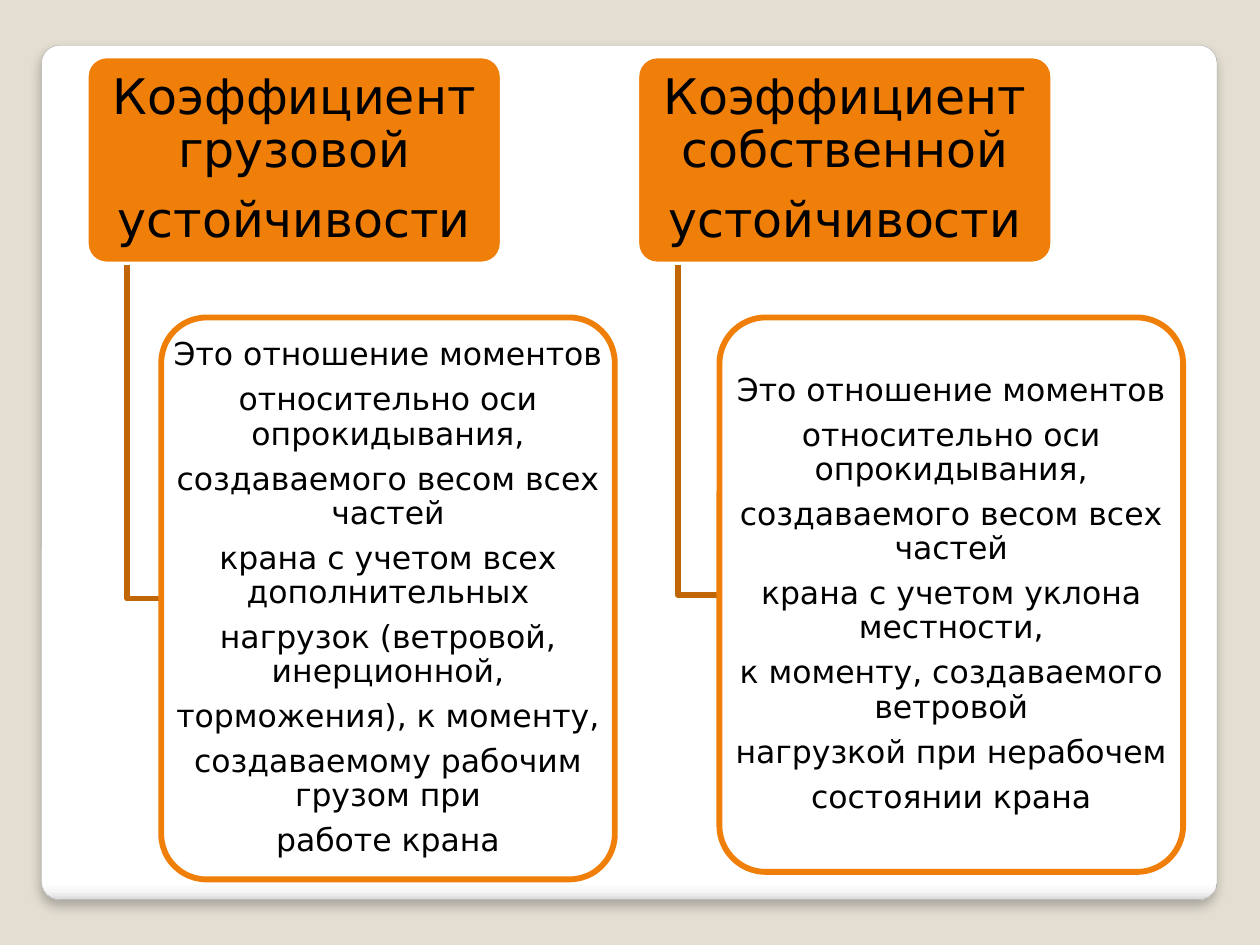
from lxml import etree
from pptx import Presentation
from pptx.dml.color import RGBColor
from pptx.enum.shapes import MSO_SHAPE
from pptx.enum.text import MSO_ANCHOR, PP_ALIGN
from pptx.oxml.ns import qn
from pptx.util import Inches, Pt

ROUND = MSO_SHAPE.ROUNDED_RECTANGLE
MIDDLE = MSO_ANCHOR.MIDDLE
CENTER = PP_ALIGN.CENTER
FONT = "DejaVu Sans"
COLORS = {
    "back": "E3DED1", "white": "FFFFFF", "edge": "A4A4A4", "black": "000000",
    "orange": "F07F09", "brown": "C06607",
}
PANEL_STOPS = [(0, "FFFFFF"), (98, "FFFFFF"), (99, "F7F7F7"), (100, "DADADA")]
TOP, HEAD_W, HEAD_H = 0.44, 3.31, 1.66
BODY_TOP, TRUNK = 2.52, 0.33

# head left, body left, body width, body height, head text, body text
BRANCHES = [
    (0.68, 1.28, 3.6, 4.46,
     ["Коэффициент грузовой", "устойчивости"],
     ["Это отношение моментов",
      "относительно оси опрокидывания,",
      "создаваемого весом всех частей",
      "крана с учетом всех дополнительных",
      "нагрузок (ветровой, инерционной,",
      "торможения), к моменту,",
      "создаваемому рабочим грузом при",
      "работе крана"]),
    (5.05, 5.71, 3.68, 4.4,
     ["Коэффициент собственной", "устойчивости"],
     ["Это отношение моментов",
      "относительно оси опрокидывания,",
      "создаваемого весом всех частей",
      "крана с учетом уклона местности,",
      "к моменту, создаваемого ветровой",
      "нагрузкой при нерабочем",
      "состоянии крана"]),
]


def color(name):
    return RGBColor.from_string(COLORS[name])


def set_line(shape, name, width):
    shape.line.color.rgb = color(name)
    shape.line.width = Pt(width)


def add_tag(parent, tag, **attrs):
    node = etree.SubElement(parent, qn(tag))
    for key, value in attrs.items():
        node.set(key, str(value))
    return node


def add_box(slide, box, radius, fill, line, width):
    shape = slide.shapes.add_shape(ROUND, *map(Inches, box))
    shape.adjustments[0] = radius
    shape.shadow.inherit = False
    shape.fill.solid()
    shape.fill.fore_color.rgb = color(fill)
    set_line(shape, line, width)
    return shape


def add_panel(slide):
    """Add the white card with a shaded lower edge and a soft shadow."""
    panel = add_box(slide, (0.33, 0.36, 9.33, 6.78), 0.021, "white", "edge", 0.16)
    panel.fill.gradient()
    panel.fill.gradient_angle = 270
    props = panel.element.spPr
    stops = props.find(".//" + qn("a:gsLst"))
    for old in list(stops):
        stops.remove(old)
    for place, tone in PANEL_STOPS:
        stop = add_tag(stops, "a:gs", pos=place * 1000)
        add_tag(stop, "a:srgbClr", val=tone)
    shadow = add_tag(props.find(qn("a:effectLst")), "a:outerShdw",
                     blurRad=Pt(6), dist=Pt(4), dir=90 * 60000,
                     algn="t", rotWithShape=0)
    tone = add_tag(shadow, "a:srgbClr", val=COLORS["black"])
    add_tag(tone, "a:alpha", val=25000)


def add_text(slide, box, lines, size, side, edge):
    frame = slide.shapes.add_textbox(*map(Inches, box)).text_frame
    frame.word_wrap = True
    frame.vertical_anchor = MIDDLE
    frame.margin_left = frame.margin_right = Inches(side)
    frame.margin_top = frame.margin_bottom = Inches(edge)
    frame.text = "\n".join(lines)
    for para in frame.paragraphs:
        para.alignment = CENTER
        para.line_spacing = 0.9
        para.space_after = Pt(size * 0.35)
        para.font.name = FONT
        para.font.size = Pt(size)
        para.font.color.rgb = color("black")


def add_elbow(slide, x, y, end_x, end_y):
    path = slide.shapes.build_freeform(Inches(x), Inches(y))
    path.add_line_segments([(Inches(x), Inches(end_y)),
                            (Inches(end_x), Inches(end_y))], close=False)
    elbow = path.convert_to_shape()
    elbow.shadow.inherit = False
    elbow.fill.background()
    set_line(elbow, "brown", 3.35)


def add_branch(slide, left, body_left, width, height, title, lines):
    head = (left, TOP, HEAD_W, HEAD_H)
    body = (body_left, BODY_TOP, width, height)
    add_box(slide, head, 0.1, "orange", "white", 3.35)
    add_text(slide, head, title, 28, 0.06, 0.04)
    add_elbow(slide, left + TRUNK, TOP + HEAD_H, body_left, BODY_TOP + height / 2)
    card = add_box(slide, body, 0.1, "white", "orange", 3.35)
    tone = card.element.spPr.find(qn("a:solidFill"))[0]
    add_tag(tone, "a:alpha", val=90000)
    add_text(slide, body, lines, 18, 0.04, 0.03)


def main():
    deck = Presentation()
    deck.slide_width, deck.slide_height = Inches(10), Inches(7.5)
    slide = deck.slides.add_slide(deck.slide_layouts[6])
    slide.background.fill.solid()
    slide.background.fill.fore_color.rgb = color("back")
    add_panel(slide)
    for branch in BRANCHES:
        add_branch(slide, *branch)
    deck.save("out.pptx")


if __name__ == "__main__":
    main()
